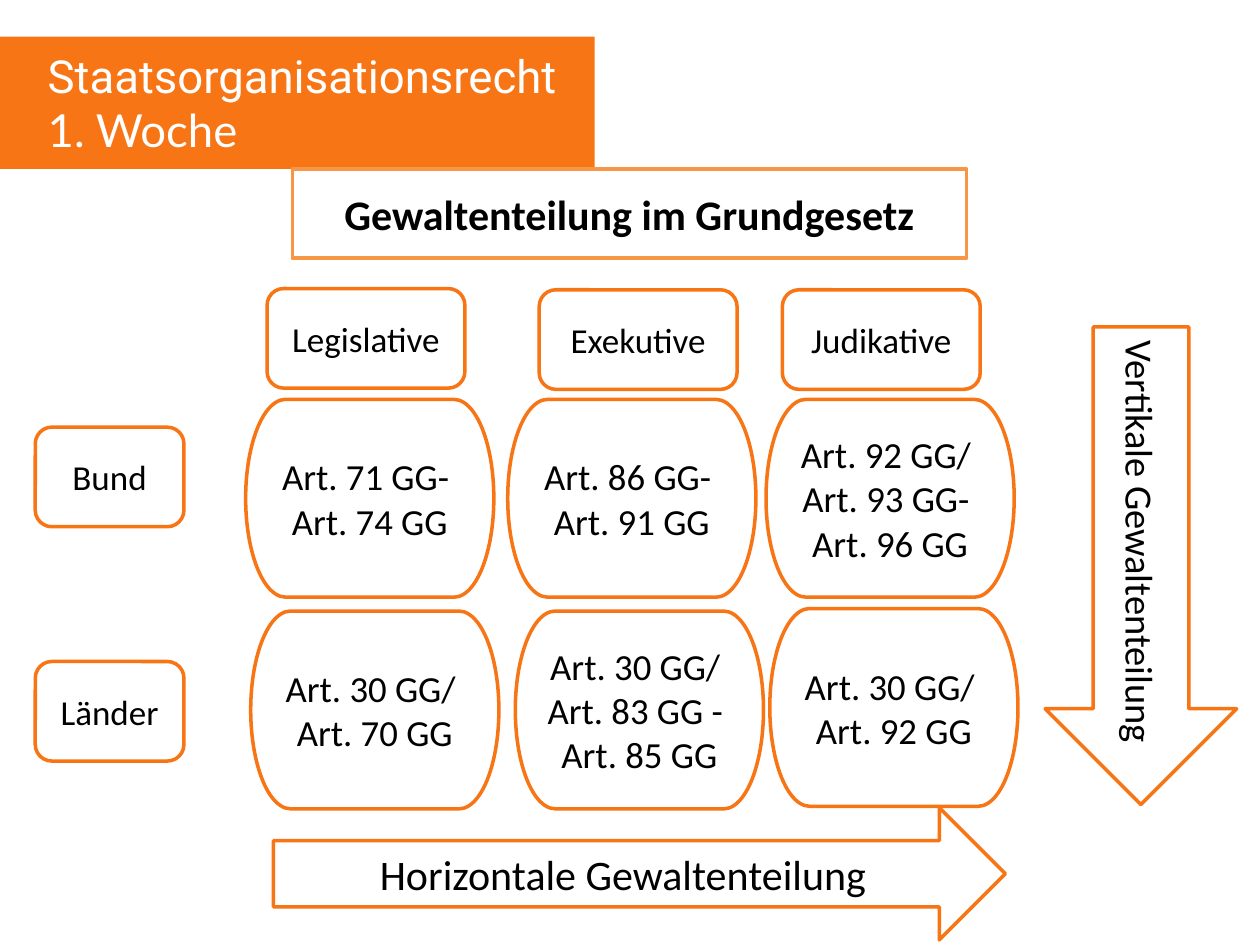
from pptx import Presentation
from pptx.dml.color import RGBColor
from pptx.enum.shapes import MSO_SHAPE
from pptx.enum.text import MSO_ANCHOR, PP_ALIGN
from pptx.util import Inches, Pt

ORANGE = "F77515"


def color(code):
    return RGBColor.from_string(code)


def write(frame, text, size=20, font="Calibri", ink="000000", bold=False,
          align=PP_ALIGN.CENTER, anchor=MSO_ANCHOR.MIDDLE):
    """Fill a text frame, one paragraph per line; font may list one per line."""
    frame.word_wrap = True
    frame.vertical_anchor = anchor
    lines = text.split("\n")
    fonts = [font] * len(lines) if isinstance(font, str) else font
    for i, (line, name) in enumerate(zip(lines, fonts)):
        para = frame.paragraphs[0] if i == 0 else frame.add_paragraph()
        para.alignment = align
        run = para.add_run()
        run.text = line
        run.font.size = Pt(size)
        run.font.name = name
        run.font.bold = bold
        run.font.color.rgb = color(ink)


deck = Presentation()
deck.slide_width, deck.slide_height = Inches(10), Inches(7.5)
slide = deck.slides.add_slide(deck.slide_layouts[6])


def draw(kind, left, top, width, height, line=ORANGE, fill=None):
    shape = slide.shapes.add_shape(
        kind, Inches(left), Inches(top), Inches(width), Inches(height))
    shape.shadow.inherit = False
    if fill:
        shape.fill.solid()
        shape.fill.fore_color.rgb = color(fill)
        shape.line.fill.background()
    else:
        shape.fill.background()
        shape.line.color.rgb = color(line)
        shape.line.width = Pt(2)
    return shape


# Header
draw(MSO_SHAPE.RECTANGLE, 0, 0.29, 4.72, 1.05, fill=ORANGE)
head = slide.shapes.add_textbox(
    Inches(0.28), Inches(0.33), Inches(4.72), Inches(0.98))
write(head.text_frame, "Staatsorganisationsrecht\n1. Woche", size=26,
      font=["Roboto", "Lato"], ink="FFFFFF", align=PP_ALIGN.LEFT,
      anchor=MSO_ANCHOR.TOP)

# Arrows; the downward label stays on one line inside the shaft
down = draw(MSO_SHAPE.RIGHT_ARROW, 7.16, 3.73, 3.79, 1.52)
down.rotation = 90
write(down.text_frame, "Vertikale Gewaltenteilung", size=22)
down.text_frame.margin_left = down.text_frame.margin_right = Inches(0.03)
across = draw(MSO_SHAPE.RIGHT_ARROW, 2.17, 6.41, 5.81, 1.05)
write(across.text_frame, "Horizontale Gewaltenteilung", size=24)

# Row and column labels
labels = [
    ("Bund", 0.28, 3.39, 1.18),
    ("Länder", 0.28, 5.25, 1.18),
    ("Legislative", 2.12, 2.29, 1.57),
    ("Exekutive", 4.28, 2.3, 1.57),
    ("Judikative", 6.21, 2.3, 1.57),
]
for text, left, top, width in labels:
    label = draw(MSO_SHAPE.ROUNDED_RECTANGLE, left, top, width, 0.79)
    write(label.text_frame, text)

# Articles: federal row, then state row
cells = [
    ("Art. 71 GG- \nArt. 74 GG", 1.95, 3.17),
    ("Art. 86 GG- \nArt. 91 GG", 4.03, 3.17),
    ("Art. 92 GG/ \nArt. 93 GG- \nArt. 96 GG", 6.08, 3.17),
    ("Art. 30 GG/ \nArt. 70 GG", 1.99, 4.85),
    ("Art. 30 GG/ \nArt. 83 GG - \nArt. 85 GG", 4.09, 4.85),
    ("Art. 30 GG/ \nArt. 92 GG", 6.11, 4.83),
]
for text, left, top in cells:
    cell = draw(MSO_SHAPE.FLOWCHART_TERMINATOR, left, top, 1.97, 1.57)
    write(cell.text_frame, text, size=21)

# Title
title = draw(MSO_SHAPE.RECTANGLE, 2.32, 1.34, 5.35, 0.71, line="F79646")
write(title.text_frame, "Gewaltenteilung im Grundgesetz", size=24, bold=True)

deck.save("out.pptx")
